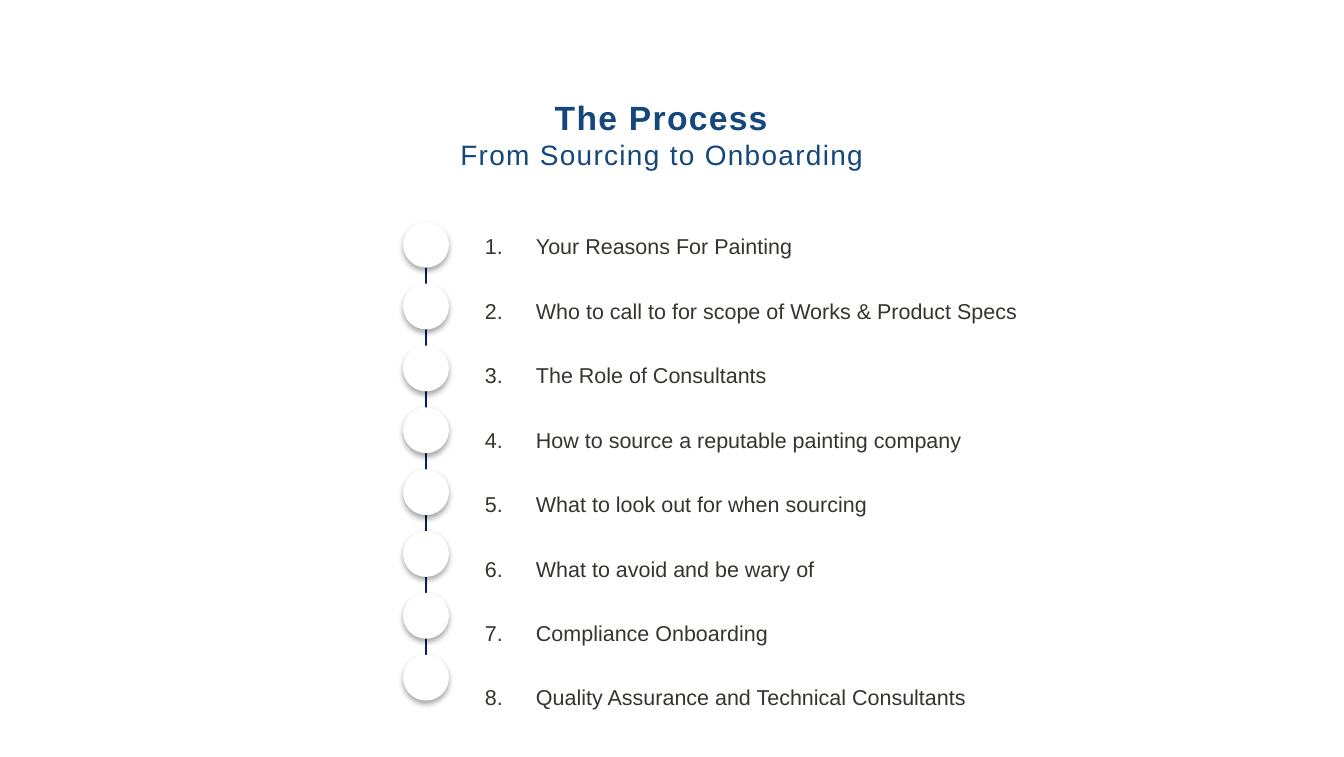
from lxml.etree import SubElement as Sub
from pptx import Presentation as Deck
from pptx.dml.color import RGBColor as Rgb
from pptx.enum.shapes import MSO_CONNECTOR as Link, MSO_SHAPE as Kind
from pptx.enum.text import MSO_ANCHOR as Anchor, PP_ALIGN as Align
from pptx.oxml.ns import qn
from pptx.util import Inches as In, Pt

THEME = {
    "head": {"name": "Arial", "size": Pt(18), "bold": True},
    "sub": {"name": "Arial", "size": Pt(15), "bold": False},
    "item": {"name": "Arial", "size": Pt(11.5)},
    "navy": Rgb.from_string("14477B"),
    "ink": Rgb.from_string("383330"),
    "rail": Rgb.from_string("002060"),
    "white": Rgb.from_string("FFFFFF"),
}
STEPS = [
    "Your Reasons For Painting",
    "Who to call to for scope of Works & Product Specs",
    "The Role of Consultants",
    "How to source a reputable painting company",
    "What to look out for when sourcing",
    "What to avoid and be wary of",
    "Compliance Onboarding",
    "Quality Assurance and Technical Consultants",
]
LEFT, TOP, SIDE, PITCH = 3, 1.65, 0.34, 0.46


def style(font, look, tint):
    """Apply a theme type style and a colour to a font."""
    for key, value in THEME[look].items():
        setattr(font, key, value)
    font.color.rgb = THEME[tint]


def frame(slide, area, **form):
    """Add a wrapping text box and return its text frame."""
    text = slide.shapes.add_textbox(*map(In, area)).text_frame
    for key, value in {"word_wrap": True, "vertical_anchor": Anchor.TOP, **form}.items():
        setattr(text, key, value)
    return text


def title(slide):
    """Add the two-line centred heading."""
    para = frame(slide, (1.7, 0.67, 6.45, 0.51), margin_left=0, margin_right=0).paragraphs[0]
    para.alignment = Align.CENTER
    for look, words in (("head", "The Process"), ("sub", "From Sourcing to Onboarding")):
        if look == "sub":
            para.add_line_break()
        run = para.add_run()
        run.text = words
        style(run.font, look, "navy")
        run.font._element.set("spc", "70")


def rail(slide):
    """Add the thin line that joins the dots."""
    mid = In(LEFT + SIDE / 2)
    line = slide.shapes.add_connector(Link.STRAIGHT, mid, In(1.75), mid, In(5.07))
    line.line.color.rgb = THEME["rail"]
    line.line.width = Pt(0.75)
    Sub(line._element.spPr, qn("a:effectLst"))


def dot(slide, row):
    """Add one white dot with a soft shadow below it."""
    disc = slide.shapes.add_shape(Kind.OVAL, *map(In, (LEFT, TOP + row * PITCH, SIDE, SIDE)))
    disc.fill.solid()
    disc.fill.fore_color.rgb = THEME["white"]
    disc.line.fill.background()
    disc.shadow.inherit = False
    glow = Sub(disc._element.spPr.find(qn("a:effectLst")), qn("a:outerShdw"),
               blurRad=str(Pt(3.1)), dist=str(Pt(1.8)), dir="5400000", rotWithShape="0")
    Sub(Sub(glow, qn("a:srgbClr"), val="000000"), qn("a:alpha"), val="35000")


def steps(slide):
    """Add the numbered list of steps."""
    text = frame(slide, (3.51, 1.4, 4.4, 3.89))
    for row, words in enumerate(STEPS):
        para = text.add_paragraph() if row else text.paragraphs[0]
        para.line_spacing = 2.5
        props = para._p.get_or_add_pPr()
        props.set("marL", str(In(0.38)))
        props.set("indent", str(In(-0.38)))
        Sub(props, qn("a:buFont"), typeface="+mj-lt")
        Sub(props, qn("a:buAutoNum"), type="arabicPeriod")
        run = para.add_run()
        run.text = words
        style(run.font, "item", "ink")


def main():
    """Build the slide and save it."""
    deck = Deck()
    deck.slide_width, deck.slide_height = In(10), In(5.63)
    slide = deck.slides.add_slide(deck.slide_layouts[6])
    title(slide)
    rail(slide)
    for row in range(len(STEPS)):
        dot(slide, row)
    steps(slide)
    deck.save("out.pptx")


if __name__ == "__main__":
    main()
